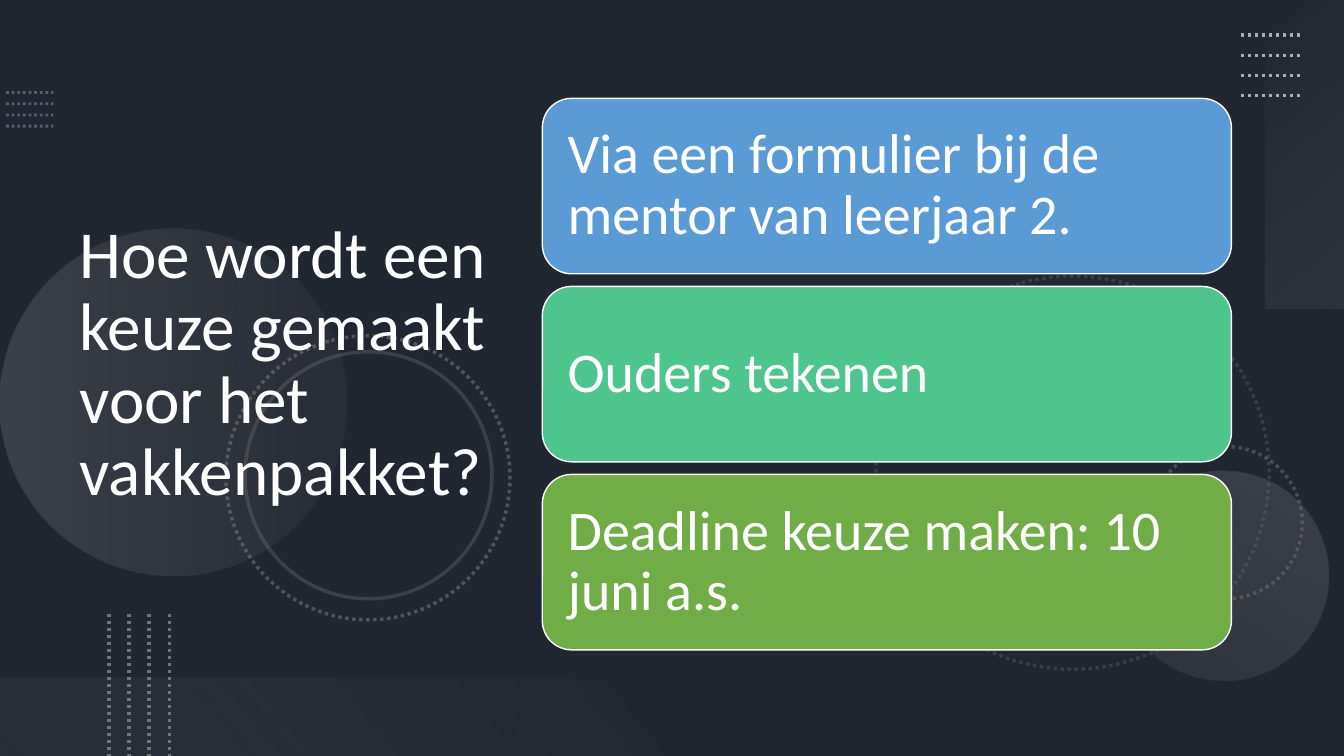
import pptx
import pptx.util
import pptx.dml.color
import pptx.enum.dml
import pptx.enum.shapes
import pptx.enum.text
import pptx.oxml
import pptx.oxml.ns

Pt = pptx.util.Pt
SHAPE = pptx.enum.shapes.MSO_SHAPE
DOTS = pptx.enum.dml.MSO_LINE.ROUND_DOT

# Content
TITLE = "Hoe wordt een keuze gemaakt voor het vakkenpakket?"
CARDS = [
    ("Via een formulier bij de mentor van leerjaar 2.", "5B9BD5"),
    ("Ouders tekenen", "4DC58D"),
    ("Deadline keuze maken: 10 juni a.s.", "70AD47"),
]

THEME = {
    "background": "44546A", "shade": "000000", "text": "FFFFFF",
    "blue_dots": "8497B0", "grey": "767171", "light": "AFABAB",
    "pale": "F5F5F5", "font": "Calibri", "title": 48, "body": 40,
}

# Decoration: lengths in points, opacity in percent
# ring: left, top, diameter, rotation, dotted, opacity
RINGS = [
    (625.7, 197.3, 280.8, 75, True, 30),
    (821.5, 319, 108.7, 270, True, 50),
    (161.3, 239.8, 203, 75, True, 60),
    (175, 251.3, 176.4, 75, False, 35),
]
# gradient: shape, left, top, width, height, rotation, angle, (colour, opacity) twice
DISCS = [
    (SHAPE.OVAL, 0, 163.4, 247.7, 247.7, 270, 90, ("light", 20), ("grey", 10)),
    (SHAPE.OVAL, 799.2, 336.2, 149.8, 149.8, 210, 90, ("light", 10), ("light", 20)),
]
BANDS = [
    (SHAPE.RECTANGLE, 822.2, 82.1, 220.3, 56.2, 270, 140, ("pale", 0), ("light", 10)),
    (SHAPE.RECTANGLE, 0, 483.8, 480.2, 56.2, 180, 140, ("grey", 10), ("pale", 0)),
]
# four dotted lines: left, top, run (dx, dy), step (dx, dy), colour, width, opacity
DOT_SETS = [
    (4.3, 66.1, (33.9, 0), (0, 8), "blue_dots", 2, 50),
    (886.3, 25.1, (43.2, 0), (0, 14.4), "light", 2.5, 100),
    (77.8, 438.5, (0, 101.5), (14.4, 0), "grey", 2.5, 100),
]


def rgb(name):
    return pptx.dml.color.RGBColor.from_string(THEME.get(name, name))


def set_opacity(part, percent):
    for color in part.iter(pptx.oxml.ns.qn("a:srgbClr")):
        alpha = pptx.oxml.parse_xml(
            f'<a:alpha {pptx.oxml.ns.nsdecls("a")} val="{percent * 1000}"/>')
        color.append(alpha)


def add_shape(s, kind, left, top, width, height, rotation=0):
    sp = s.shapes.add_shape(kind, Pt(left), Pt(top), Pt(width), Pt(height))
    sp.shadow.inherit = False
    sp.rotation = rotation
    return sp


def add_ring(s, left, top, size, rotation, dotted, opacity):
    sp = add_shape(s, SHAPE.OVAL, left, top, size, size, rotation)
    sp.fill.background()
    sp.line.color.rgb = rgb("grey")
    sp.line.width = Pt(2.5)
    if dotted:
        sp.line.dash_style = DOTS
    set_opacity(sp.line._get_or_add_ln(), opacity)


def add_gradient(s, kind, left, top, width, height, rotation, angle, *stops):
    sp = add_shape(s, kind, left, top, width, height, rotation)
    sp.line.fill.background()
    sp.fill.gradient()
    sp.fill.gradient_angle = 360 - angle
    for stop, (color, opacity) in zip(sp.fill.gradient_stops, stops):
        stop.color.rgb = rgb(color)
        set_opacity(stop._gs, opacity)


def add_dots(s, left, top, run, step, color, width, opacity):
    for i in range(4):
        x, y = left + i * step[0], top + i * step[1]
        line = s.shapes.add_connector(
            pptx.enum.shapes.MSO_CONNECTOR.STRAIGHT,
            Pt(x), Pt(y), Pt(x + run[0]), Pt(y + run[1]))
        line.line.color.rgb = rgb(color)
        line.line.width = Pt(width)
        line.line.dash_style = DOTS
        set_opacity(line.line._get_or_add_ln(), opacity)
        line._element.spPr.append(pptx.oxml.parse_xml(
            f'<a:effectLst {pptx.oxml.ns.nsdecls("a")}/>'))


def write(sp, text, size):
    tf = sp.text_frame
    tf.word_wrap = True
    tf.vertical_anchor = pptx.enum.text.MSO_ANCHOR.MIDDLE
    tf.text = text
    p = tf.paragraphs[0]
    p.alignment = pptx.enum.text.PP_ALIGN.LEFT
    p.line_spacing = 0.9
    r = p.runs[0]
    r.font.name = THEME["font"]
    r.font.size = Pt(THEME[size])
    r.font.color.rgb = rgb("text")
    return tf


def main():
    prs = pptx.Presentation()
    prs.slide_width, prs.slide_height = Pt(960), Pt(540)
    s = prs.slides.add_slide(prs.slide_layouts[6])

    # Background and its dark shade
    s.background.fill.solid()
    s.background.fill.fore_color.rgb = rgb("background")
    shade = add_shape(s, SHAPE.RECTANGLE, 0, 0, 960, 540)
    shade.fill.solid()
    shade.fill.fore_color.rgb = rgb("shade")
    shade.line.fill.background()
    set_opacity(shade._element.spPr, 53)

    # Decoration
    for disc in DISCS:
        add_gradient(s, *disc)
    for ring in RINGS:
        add_ring(s, *ring)
    for band in BANDS:
        add_gradient(s, *band)
    for dots in DOT_SETS:
        add_dots(s, *dots)

    # Title
    title = s.shapes.add_textbox(Pt(49.7), Pt(38.9), Pt(330.5), Pt(444.2))
    write(title, TITLE, "title")

    # Cards
    left, top, width, height, gap = 387.4, 70.3, 492.2, 125.3, 9
    for i, (text, color) in enumerate(CARDS):
        card = add_shape(s, SHAPE.ROUNDED_RECTANGLE,
                         left, top + i * (height + gap), width, height)
        card.fill.solid()
        card.fill.fore_color.rgb = rgb(color)
        card.line.color.rgb = rgb("text")
        card.line.width = Pt(1)
        tf = write(card, text, "body")
        tf.margin_left = tf.margin_right = Pt(12)
        tf.margin_top = tf.margin_bottom = Pt(12)

    prs.save("out.pptx")


if __name__ == "__main__":
    main()
